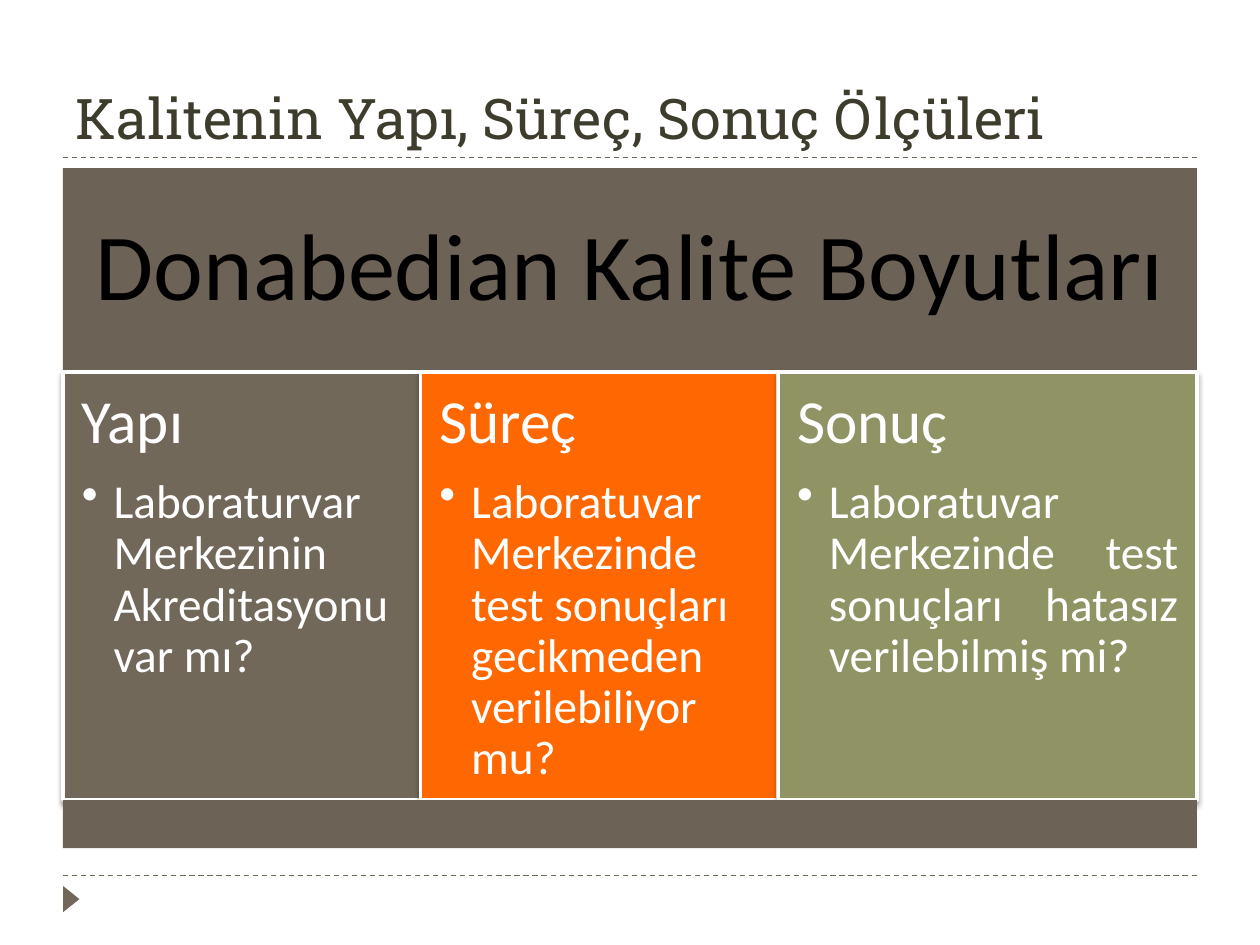
from lxml import etree
from pptx import Presentation
from pptx.dml.color import RGBColor
from pptx.enum.dml import MSO_LINE
from pptx.enum.shapes import MSO_CONNECTOR, MSO_SHAPE
from pptx.enum.text import MSO_ANCHOR, MSO_AUTO_SIZE, PP_ALIGN
from pptx.oxml import parse_xml
from pptx.oxml.ns import nsdecls, qn
from pptx.util import Cm, Pt

LEFT, WIDTH = 1.27, 22.86
BROWN, DARK_BROWN, WHITE = "71685A", "6C6356", "FFFFFF"


def color(value):
    return RGBColor.from_string(value)


def add_block(kind, left, top, width, height, fill):
    block = page.shapes.add_shape(kind, Cm(left), Cm(top), Cm(width), Cm(height))
    block.shadow.inherit = False
    block.fill.solid()
    block.fill.fore_color.rgb = color(fill)
    block.line.fill.background()
    return block


deck = Presentation()
deck.slide_width, deck.slide_height = Cm(25.4), Cm(19.05)
page = deck.slides.add_slide(deck.slide_layouts[5])

# Dashed rules under the title and above the footer
for y in (17.65, 3.18):
    rule = page.shapes.add_connector(
        MSO_CONNECTOR.STRAIGHT, Cm(LEFT), Cm(y), Cm(LEFT + WIDTH), Cm(y))
    rule.line.color.rgb = color(BROWN)
    rule.line.width = Pt(0.75)
    rule.line.dash_style = MSO_LINE.DASH
    etree.SubElement(rule.element.spPr, qn("a:effectLst"))

# Footer marker
marker = add_block(MSO_SHAPE.ISOSCELES_TRIANGLE, 1.17, 17.96, 0.53, 0.33, BROWN)
marker.rotation = 90

# Title
title = page.shapes.title
title.left, title.top, title.width, title.height = Cm(LEFT), Cm(0.43), Cm(WIDTH), Cm(2.74)
frame = title.text_frame
frame.text = "Kalitenin Yapı, Süreç, Sonuç Ölçüleri"
frame.auto_size = MSO_AUTO_SIZE.NONE
frame.vertical_anchor = MSO_ANCHOR.BOTTOM
para = frame.paragraphs[0]
para.alignment = PP_ALIGN.LEFT
para.font.name, para.font.size = "Roboto Slab", Pt(32)
para.font.color.rgb = color("3E3D2D")

# Header band
header = add_block(MSO_SHAPE.RECTANGLE, LEFT, 3.39, WIDTH, 4.11, DARK_BROWN)
frame = header.text_frame
frame.word_wrap = True
frame.margin_left = frame.margin_right = frame.margin_top = frame.margin_bottom = Cm(0.58)
frame.text = "Donabedian Kalite Boyutları"
para = frame.paragraphs[0]
para.alignment = PP_ALIGN.CENTER
para.line_spacing = 0.9
para.font.name, para.font.size = "Calibri", Pt(54)
para.font.color.rgb = color("000000")

# Three quality dimensions, side by side
columns = [
    ("Yapı", "Laboraturvar Merkezinin Akreditasyonu var mı?",
     7.21, BROWN, PP_ALIGN.LEFT),
    ("Süreç", "Laboratuvar Merkezinde test sonuçları gecikmeden verilebiliyor mu?",
     7.21, "FF6700", PP_ALIGN.LEFT),
    ("Sonuç", "Laboratuvar Merkezinde test sonuçları hatasız verilebilmiş mi?",
     8.44, "909465", PP_ALIGN.JUSTIFY),
]
left = LEFT
for heading, question, width, fill, alignment in columns:
    column = add_block(MSO_SHAPE.RECTANGLE, left, 7.5, width, 8.63, fill)
    left += width
    column.line.color.rgb = color(WHITE)
    column.line.width = Pt(2)
    column.element.spPr.find(qn("a:effectLst")).append(parse_xml(
        f'<a:outerShdw {nsdecls("a")} blurRad="38100" dist="25400" dir="5400000" '
        'rotWithShape="0"><a:srgbClr val="000000"><a:alpha val="40000"/>'
        '</a:srgbClr></a:outerShdw>'))

    frame = column.text_frame
    frame.word_wrap = True
    frame.vertical_anchor = MSO_ANCHOR.TOP
    frame.margin_left = frame.margin_right = frame.margin_top = frame.margin_bottom = Cm(0.38)
    frame.text = f"{heading}\n{question}"
    heading_para, question_para = frame.paragraphs
    for para, size, gap, align in ((heading_para, 35, 12, PP_ALIGN.LEFT),
                                   (question_para, 27, 4, alignment)):
        para.alignment = align
        para.line_spacing = 0.9
        para.space_after = Pt(gap)
        if para is question_para:
            para.level = 1
            properties = para._p.get_or_add_pPr()
            properties.set("marL", str(Cm(0.64)))
            properties.set("indent", str(-Cm(0.64)))
            etree.SubElement(properties, qn("a:buChar"), char="•")
        para.font.name, para.font.size = "Calibri", Pt(size)
        para.font.color.rgb = color(WHITE)

# Bottom band
add_block(MSO_SHAPE.RECTANGLE, LEFT, 16.13, WIDTH, 0.97, DARK_BROWN)

deck.save("out.pptx")
